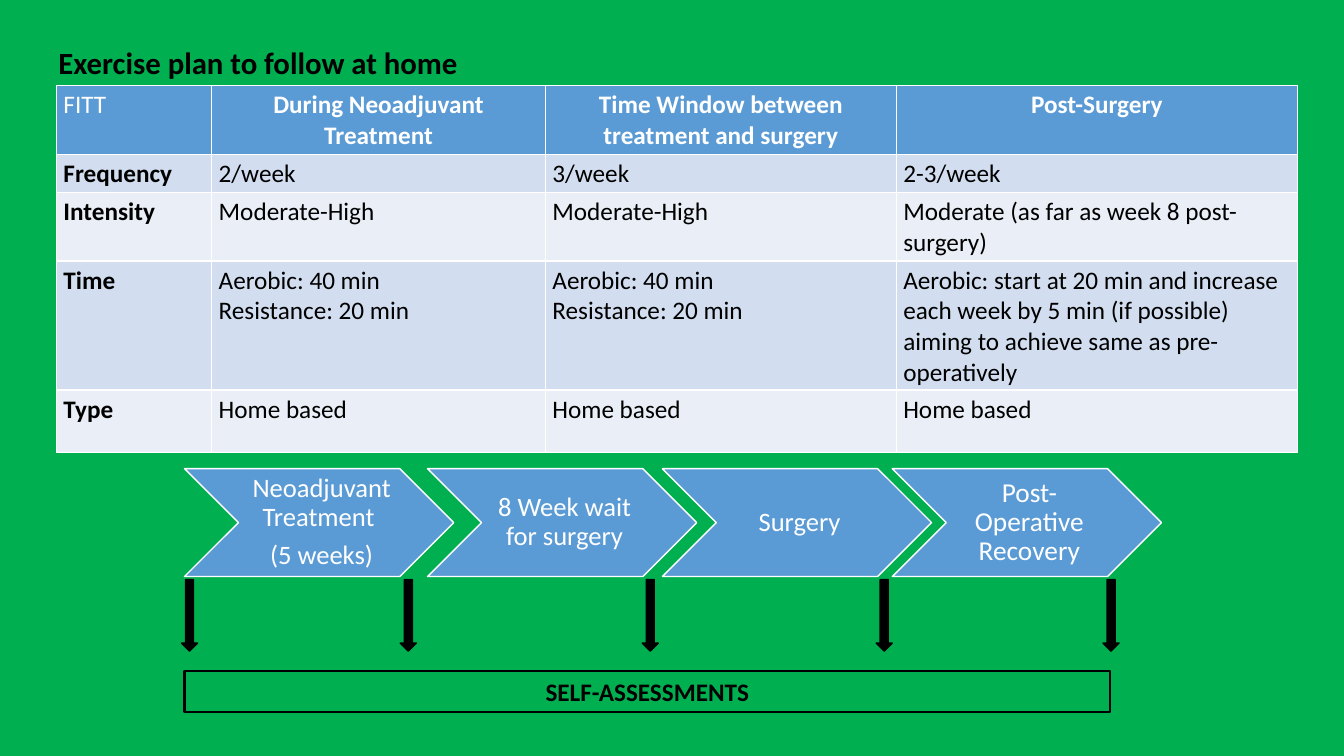
import pptx
import pptx.util
import pptx.dml.color
import pptx.enum.shapes
import pptx.enum.text

Inches = pptx.util.Inches
Pt = pptx.util.Pt
RGBColor = pptx.dml.color.RGBColor
SHAPE = pptx.enum.shapes.MSO_SHAPE
ALIGN = pptx.enum.text.PP_ALIGN
ANCHOR = pptx.enum.text.MSO_ANCHOR

GREEN = RGBColor(0x00, 0xB0, 0x50)
BLUE = RGBColor(0x5B, 0x9B, 0xD5)
BAND_DARK = RGBColor(0xD2, 0xDE, 0xEF)
BAND_LIGHT = RGBColor(0xEA, 0xEF, 0xF7)
WHITE = RGBColor(0xFF, 0xFF, 0xFF)
BLACK = RGBColor(0x00, 0x00, 0x00)

TITLE = "Exercise plan to follow at home"
PLAN = [
    ("FITT", "During Neoadjuvant Treatment",
     "Time Window between treatment and surgery", "Post-Surgery"),
    ("Frequency", "2/week", "3/week", "2-3/week"),
    ("Intensity", "Moderate-High", "Moderate-High",
     "Moderate (as far as week 8 post-surgery)"),
    ("Time", "Aerobic: 40 min\nResistance: 20 min",
     "Aerobic: 40 min\nResistance: 20 min",
     "Aerobic: start at 20 min and increase each week by 5 min (if possible) "
     "aiming to achieve same as pre-operatively"),
    ("Type", "Home based", "Home based", "Home based"),
]
COL_WIDTHS = [1.54, 3.31, 3.48, 3.98]
ROW_HEIGHTS = [0.63, 0.36, 0.63, 1.19, 0.62]
STAGES = [
    (1.83, "Neoadjuvant Treatment \n(5 weeks)", 19),
    (4.24, "8 Week wait for surgery", 19),
    (6.57, "Surgery", 19),
    (8.85, "Post-Operative Recovery", 19.5),
]
STAGE_TOP, STAGE_W, STAGE_H = 4.65, 2.67, 1.07
ARROW_LEFTS = [1.8, 3.97, 6.37, 8.69, 10.94]
ASSESSMENTS = "SELF-ASSESSMENTS"


def write(tf, text, size, color, bold=False, align=ALIGN.LEFT):
    tf.word_wrap = True
    tf.text = text
    for p in tf.paragraphs:
        p.alignment = align
        for r in p.runs:
            r.font.name = "Calibri"
            r.font.size = Pt(size)
            r.font.bold = bold
            r.font.color.rgb = color


def add_box(slide, kind, box, fill, line, width):
    sp = slide.shapes.add_shape(kind, *map(Inches, box))
    sp.shadow.inherit = False
    if fill is None:
        sp.fill.background()
    else:
        sp.fill.solid()
        sp.fill.fore_color.rgb = fill
    sp.line.color.rgb = line
    sp.line.width = Pt(width)
    return sp


def add_stage(slide, left, text, size):
    add_box(slide, SHAPE.CHEVRON, (left, STAGE_TOP, STAGE_W, STAGE_H), BLUE, WHITE, 1)
    label = slide.shapes.add_textbox(
        Inches(left + STAGE_H / 2), Inches(STAGE_TOP),
        Inches(STAGE_W - STAGE_H), Inches(STAGE_H))
    tf = label.text_frame
    write(tf, text, size, WHITE, align=ALIGN.CENTER)
    tf.vertical_anchor = ANCHOR.MIDDLE
    tf.margin_left = Inches(0.08)
    tf.margin_right = tf.margin_top = tf.margin_bottom = Inches(0.03)
    for p in tf.paragraphs:
        p.line_spacing = 0.9
        p.space_after = Pt(0.35 * size)


def add_plan(slide):
    table = slide.shapes.add_table(
        len(PLAN), len(COL_WIDTHS), Inches(0.56), Inches(0.85),
        Inches(sum(COL_WIDTHS)), Inches(sum(ROW_HEIGHTS))).table
    for col, width in zip(table.columns, COL_WIDTHS):
        col.width = Inches(width)
    for i, (row, height) in enumerate(zip(PLAN, ROW_HEIGHTS)):
        table.rows[i].height = Inches(height)
        fill = BLUE if i == 0 else BAND_DARK if i % 2 else BAND_LIGHT
        for j, text in enumerate(row):
            cell = table.cell(i, j)
            cell.fill.solid()
            cell.fill.fore_color.rgb = fill
            cell.margin_left = cell.margin_right = Inches(0.07)
            cell.margin_top = cell.margin_bottom = Inches(0.04)
            write(cell.text_frame, text, 18, BLACK if i else WHITE,
                  bold=(i == 0) != (j == 0),
                  align=ALIGN.CENTER if i == 0 and j else ALIGN.LEFT)


def main():
    prs = pptx.Presentation()
    prs.slide_width, prs.slide_height = Inches(13.33), Inches(7.5)
    slide = prs.slides.add_slide(prs.slide_layouts[6])
    slide.background.fill.solid()
    slide.background.fill.fore_color.rgb = GREEN

    for stage in STAGES:
        add_stage(slide, *stage)
    add_plan(slide)
    title = slide.shapes.add_textbox(*map(Inches, (0.48, 0.38, 4.65, 0.47)))
    write(title.text_frame, TITLE, 22, BLACK, bold=True)
    for left in ARROW_LEFTS:
        add_box(slide, SHAPE.DOWN_ARROW, (left, 5.75, 0.16, 0.71), BLACK, BLACK, 1)
    bar = add_box(slide, SHAPE.RECTANGLE, (1.83, 6.66, 9.18, 0.4), None, BLACK, 1.5)
    write(bar.text_frame, ASSESSMENTS, 18, BLACK, bold=True, align=ALIGN.CENTER)

    prs.save("out.pptx")


if __name__ == "__main__":
    main()
